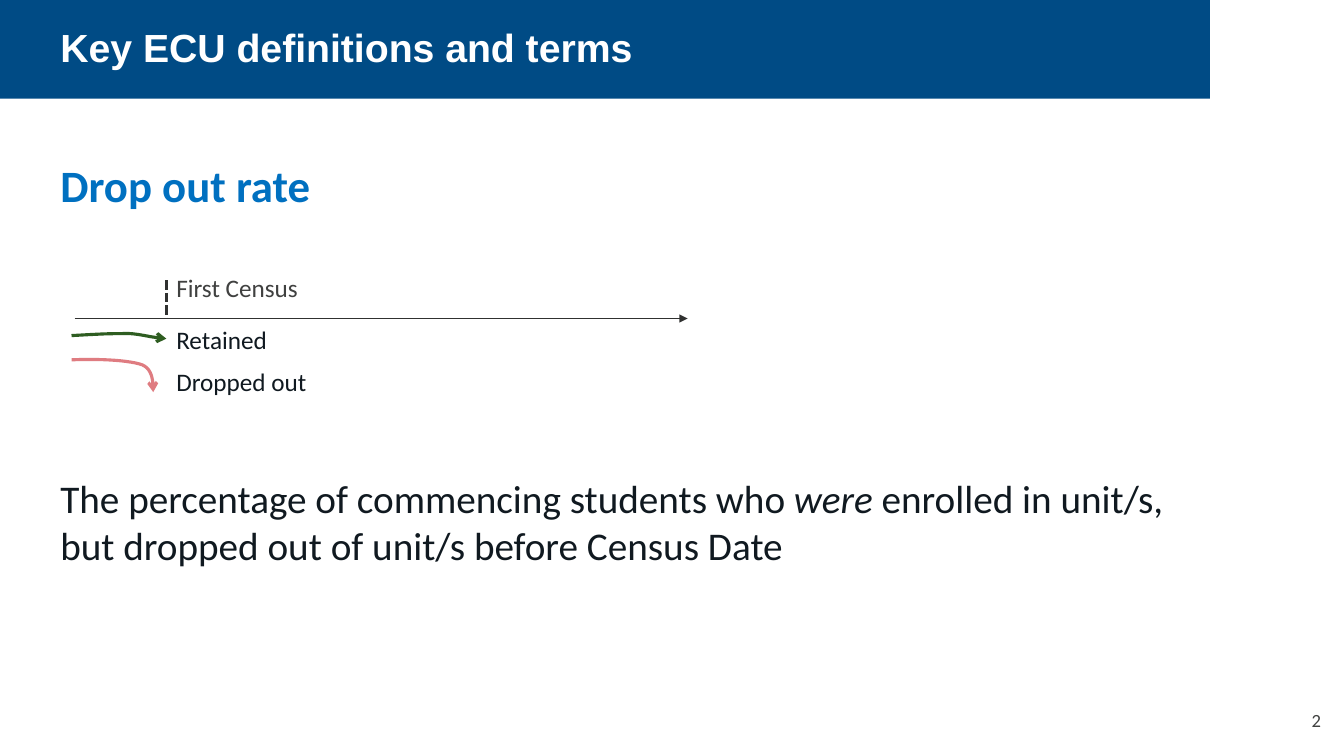
from lxml.etree import SubElement
from pptx import Presentation
from pptx.dml.color import RGBColor
from pptx.enum.dml import MSO_LINE
from pptx.enum.shapes import MSO_CONNECTOR, MSO_SHAPE
from pptx.enum.text import MSO_ANCHOR, PP_ALIGN
from pptx.oxml.ns import qn
from pptx.util import Inches, Pt

CELL = 0.5
MARGIN, WIDE = 1, 23
HEADER_COLUMNS, HEADER_ROWS = 24, 1.96
AXIS_ROW, AXIS_START, AXIS_END = 6.32, 1.48, 13.64
CENSUS_COLUMN, CENSUS_TOP = 3.3, 5.56
LABEL_SIZE = (5.62, 0.82)
CURVE_STEPS = 12

NAVY, BLUE, WHITE = "004B85", "0070C0", "FFFFFF"
INK, GREY, LINE = "101920", "404140", "303130"
GREEN, PINK = "2E5D21", "DF7C81"

TITLE = "Key ECU definitions and terms"
HEADING = "Drop out rate"
DEFINITION = [
    ("The percentage of commencing students who ", False),
    ("were", True),
    (" enrolled in unit/s, but dropped out of unit/s before Census Date", False),
]
LABELS = [
    ("First Census", 5.3, GREY),
    ("Retained", 6.34, INK),
    ("Dropped out", 7.16, INK),
]
CURVES = [
    (PINK, (1.42, 7.14), [
        ((1.92, 7.12), (2.46, 7.14), (2.76, 7.22)),
        ((3.02, 7.28), (3.04, 7.54), (3.04, 7.78)),
    ]),
    (GREEN, (1.42, 6.66), [
        ((1.78, 6.64), (2.08, 6.62), (2.42, 6.62)),
        ((2.72, 6.6), (2.96, 6.7), (3.3, 6.72)),
    ]),
]


def grid(*cells):
    return [Inches(cell * CELL) for cell in cells]


def color(value):
    return RGBColor.from_string(value)


def add_text(page, text, area, size, ink, font="Calibri", bold=False,
             align=PP_ALIGN.LEFT, anchor=MSO_ANCHOR.TOP, spacing=None, after=None):
    frame = page.shapes.add_textbox(*grid(*area)).text_frame
    frame.word_wrap = True
    frame.vertical_anchor = anchor
    para = frame.paragraphs[0]
    para.alignment = align
    para.line_spacing = spacing
    para.space_after = after
    for words, italic in [(text, False)] if isinstance(text, str) else text:
        span = para.add_run()
        span.text = words
        span.font.name, span.font.size = font, Pt(size)
        span.font.bold, span.font.italic = bold, italic
        span.font.color.rgb = color(ink)


def style_line(shape, ink, width, dash=None, head=None):
    shape.line.color.rgb = color(ink)
    shape.line.width = Pt(width)
    if dash:
        shape.line.dash_style = dash
    if head:
        SubElement(shape.line._get_or_add_ln(), qn("a:tailEnd"), type=head)


def add_line(page, start, end, ink, width, **ends):
    line = page.shapes.add_connector(MSO_CONNECTOR.STRAIGHT, *grid(*start, *end))
    style_line(line, ink, width, **ends)
    SubElement(line._element.spPr, qn("a:effectLst"))


def bezier_point(corners, share):
    rest = 1 - share
    weights = (rest ** 3, 3 * rest ** 2 * share, 3 * rest * share ** 2, share ** 3)
    return tuple(sum(w * c for w, c in zip(weights, axis)) for axis in zip(*corners))


def add_curve(page, ink, start, bends):
    points, current = [], start
    for bend in bends:
        points += [bezier_point((current, *bend), step / CURVE_STEPS)
                   for step in range(1, CURVE_STEPS + 1)]
        current = bend[-1]
    builder = page.shapes.build_freeform(*grid(*start))
    builder.add_line_segments([grid(*point) for point in points], close=False)
    curve = builder.convert_to_shape()
    curve.shadow.inherit = False
    curve.fill.background()
    style_line(curve, ink, 2.25, head="arrow")


def main():
    """Build the drop out rate slide and save it."""
    deck = Presentation()
    deck.slide_width, deck.slide_height = Inches(13.33), Inches(7.5)
    page = deck.slides.add_slide(deck.slide_layouts[6])

    header = page.shapes.add_shape(
        MSO_SHAPE.RECTANGLE, *grid(0, 0, HEADER_COLUMNS, HEADER_ROWS))
    header.shadow.inherit = False
    header.fill.solid()
    header.fill.fore_color.rgb = color(NAVY)
    header.line.fill.background()

    add_text(page, "2", (25, 13.96, 1.4, 0.66), 13.3, GREY, align=PP_ALIGN.RIGHT)
    add_text(page, TITLE, (MARGIN, 0, WIDE, HEADER_ROWS), 28, WHITE, font="Arial",
             bold=True, anchor=MSO_ANCHOR.MIDDLE, spacing=0.9)
    add_text(page, HEADING, (MARGIN, 3.04, 8.18, 1.28), 32, BLUE, bold=True)
    add_text(page, DEFINITION, (MARGIN, 9.32, WIDE, 2.08), 28, INK, after=Pt(12))

    add_line(page, (AXIS_START, AXIS_ROW), (AXIS_END, AXIS_ROW), LINE, 0.5,
             head="triangle")
    add_line(page, (CENSUS_COLUMN, CENSUS_TOP), (CENSUS_COLUMN, AXIS_ROW), LINE, 2.25,
             dash=MSO_LINE.SQUARE_DOT)
    for curve in CURVES:
        add_curve(page, *curve)
    for text, row, ink in LABELS:
        add_text(page, text, (CENSUS_COLUMN, row, *LABEL_SIZE), 18, ink)

    deck.save("out.pptx")


if __name__ == "__main__":
    main()
